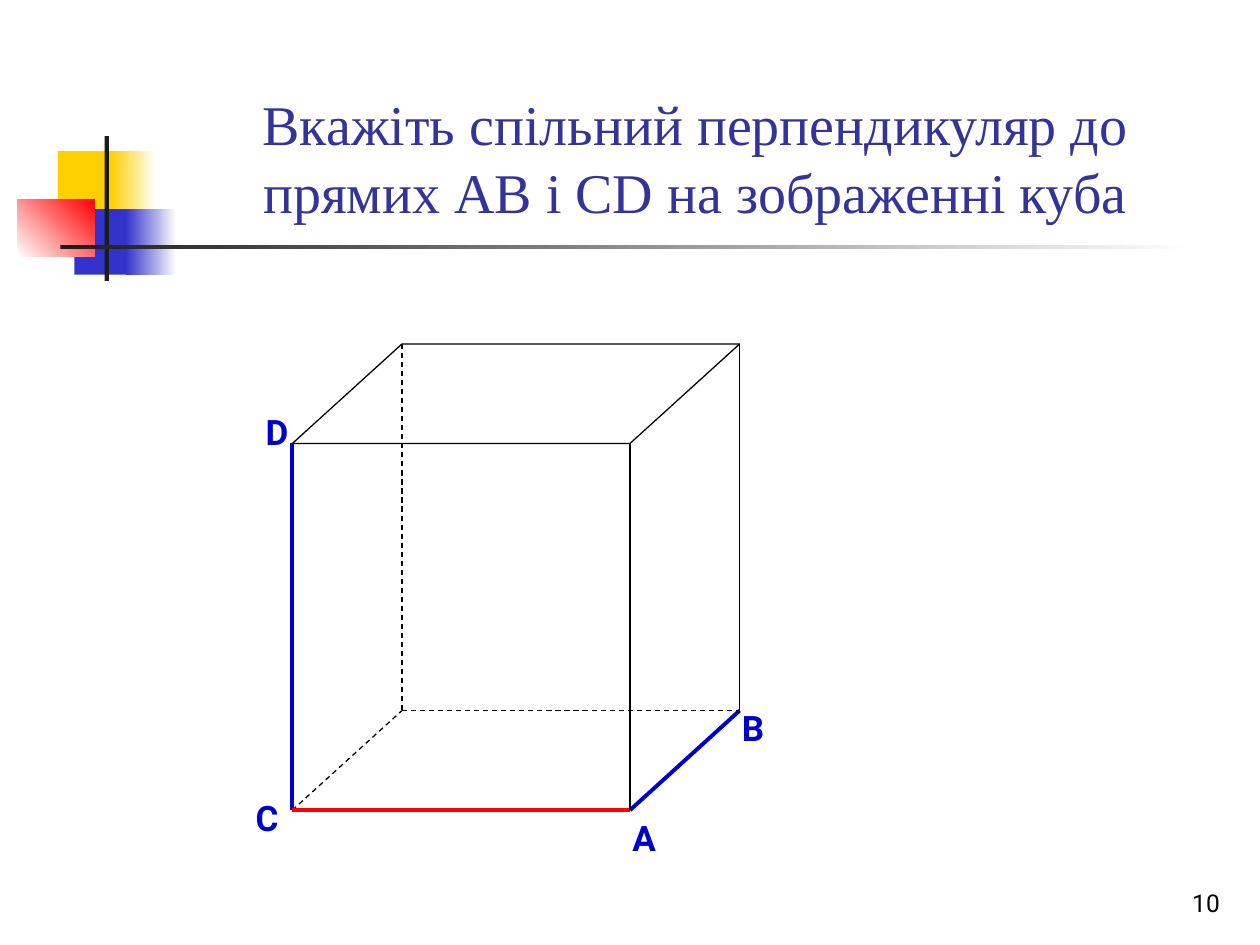
from pptx import Presentation
from pptx.dml.color import RGBColor
from pptx.enum.dml import MSO_LINE as Dash
from pptx.enum.shapes import MSO_CONNECTOR as Link, MSO_SHAPE as Form
from pptx.enum.text import MSO_ANCHOR as Anchor, MSO_AUTO_SIZE as Auto, PP_ALIGN as Align
from pptx.oxml.ns import qn
from pptx.util import Inches, Pt
from lxml.etree import SubElement

COLS, ROWS = 100, 75
WIDE, HIGH = Inches(10), Inches(7.5)
BLACK, WHITE, DARK = "000000", "FFFFFF", "1C1C1C"
GOLD, BLUE, RED = "FFCF01", "3333CC", "FF0000"
INK, MARK = "333399", "0000CC"


def color(code):
    """Turn a hex string into a colour."""
    return RGBColor.from_string(code)


def grid(x, y):
    """Turn columns and rows into slide lengths."""
    return round(x * WIDE / COLS), round(y * HIGH / ROWS)


def block(slide, box, *tones, angle=0):
    """Draw a borderless rectangle in one tone or fading between two."""
    x, y, w, h = box
    shape = slide.shapes.add_shape(Form.RECTANGLE, *grid(x, y), *grid(w, h))
    shape.shadow.inherit = False
    shape.line.fill.background()
    if len(tones) == 1:
        shape.fill.solid()
        shape.fill.fore_color.rgb = color(tones[0])
        return
    shape.fill.gradient()
    shape.fill.gradient_angle = angle
    for stop, tone, place in zip(shape.fill.gradient_stops, tones, (0, 1)):
        stop.color.rgb = color(tone)
        stop.position = place


def label(slide, box, text, size, face, tone, align=Align.LEFT, anchor=Anchor.TOP, bold=False):
    """Write one paragraph in a text box."""
    x, y, w, h = box
    frame = slide.shapes.add_textbox(*grid(x, y), *grid(w, h)).text_frame
    frame.word_wrap = True
    frame.auto_size = Auto.NONE
    frame.vertical_anchor = anchor
    para = frame.paragraphs[0]
    para.text = text
    para.alignment = align
    font = para.font
    font.size, font.name, font.bold = Pt(size), face, bold
    font.color.rgb = color(tone)


def edge(slide, start, end, tone=BLACK, width=0.75, dash=None):
    """Draw a straight line between two grid points."""
    line = slide.shapes.add_connector(Link.STRAIGHT, *grid(*start), *grid(*end))
    line.line.color.rgb = color(tone)
    line.line.width = Pt(width)
    if dash:
        line.line.dash_style = dash
    SubElement(line._element.spPr, qn("a:effectLst"))


def emblem(slide, box):
    """Draw the coloured squares with the cross and the fading rule."""
    x, y, w, h = box
    block(slide, (x + 3.2, y + 1.2, 4.8, 5.2), GOLD)
    block(slide, (x + 7.4, y + 1.2, 3.6, 5.2), GOLD, WHITE)
    block(slide, (x + 4.5, y + 5.8, 4.6, 5.2), BLUE)
    block(slide, (x + 8.6, y + 5.8, 4, 5.2), BLUE, WHITE)
    block(slide, (x, y + 5, 6.1, 4.6), WHITE, RED, angle=45)
    block(slide, (x + 6.9, y, 0.35, h), DARK)
    block(slide, (x + 3.4, y + 8.65, w - 3.4, 0.35), DARK, WHITE)


def cube(slide, box):
    """Draw the cube with its hidden edges, marked lines and letters."""
    x, y, w, h = box
    shift, rise = 8.7, 7.9
    left, right, back = x, x + w - shift, x + shift
    far, top, floor, base = x + w, y + rise, y + h - rise, y + h

    lid = slide.shapes.add_shape(Form.PARALLELOGRAM, *grid(x, y), *grid(w, rise))
    lid.adjustments[0] = shift / rise
    lid.shadow.inherit = False
    lid.fill.background()
    lid.line.color.rgb = color(BLACK)
    lid.line.width = Pt(0.75)

    edge(slide, (far, y), (far, floor))
    edge(slide, (right, base), (far, floor), MARK, 2.25)
    for start, end in (((back, y), (back, floor)),
                       ((left, base), (back, floor)),
                       ((back, floor), (far, floor))):
        edge(slide, start, end, dash=Dash.DASH)

    for text, col, row, width in (("B", far - 0.8, floor - 0.8, 3.9),
                                  ("D", left - 3.1, top - 3.1, 3.9),
                                  ("A", right - 0.8, base, 3.8),
                                  ("C", left - 3.9, base - 1.6, 4.7)):
        label(slide, (col, row, width, 4.3), text, 20, "Roboto", MARK, bold=True)

    edge(slide, (left, top), (left, base), MARK, 2.25)
    edge(slide, (left, base), (right, base), RED, 2.25)
    edge(slide, (right, top), (right, base))


def main():
    """Build the slide and save it."""
    deck = Presentation()
    deck.slide_width, deck.slide_height = WIDE, HIGH
    slide = deck.slides.add_slide(deck.slide_layouts[6])
    emblem(slide, (1.4, 10.8, 93.4, 11.5))
    label(slide, (77, 68.3, 20.8, 5), "10", 14, "Roboto", BLACK, Align.RIGHT, Anchor.BOTTOM)
    label(slide, (12.6, 2.3, 85.2, 16),
          "Вкажіть спільний перпендикуляр до прямих АВ і СD на зображенні куба",
          32, "Times New Roman", INK, Align.CENTER, Anchor.BOTTOM)
    cube(slide, (23.2, 27.3, 35.5, 37))
    deck.save("out.pptx")


if __name__ == "__main__":
    main()
